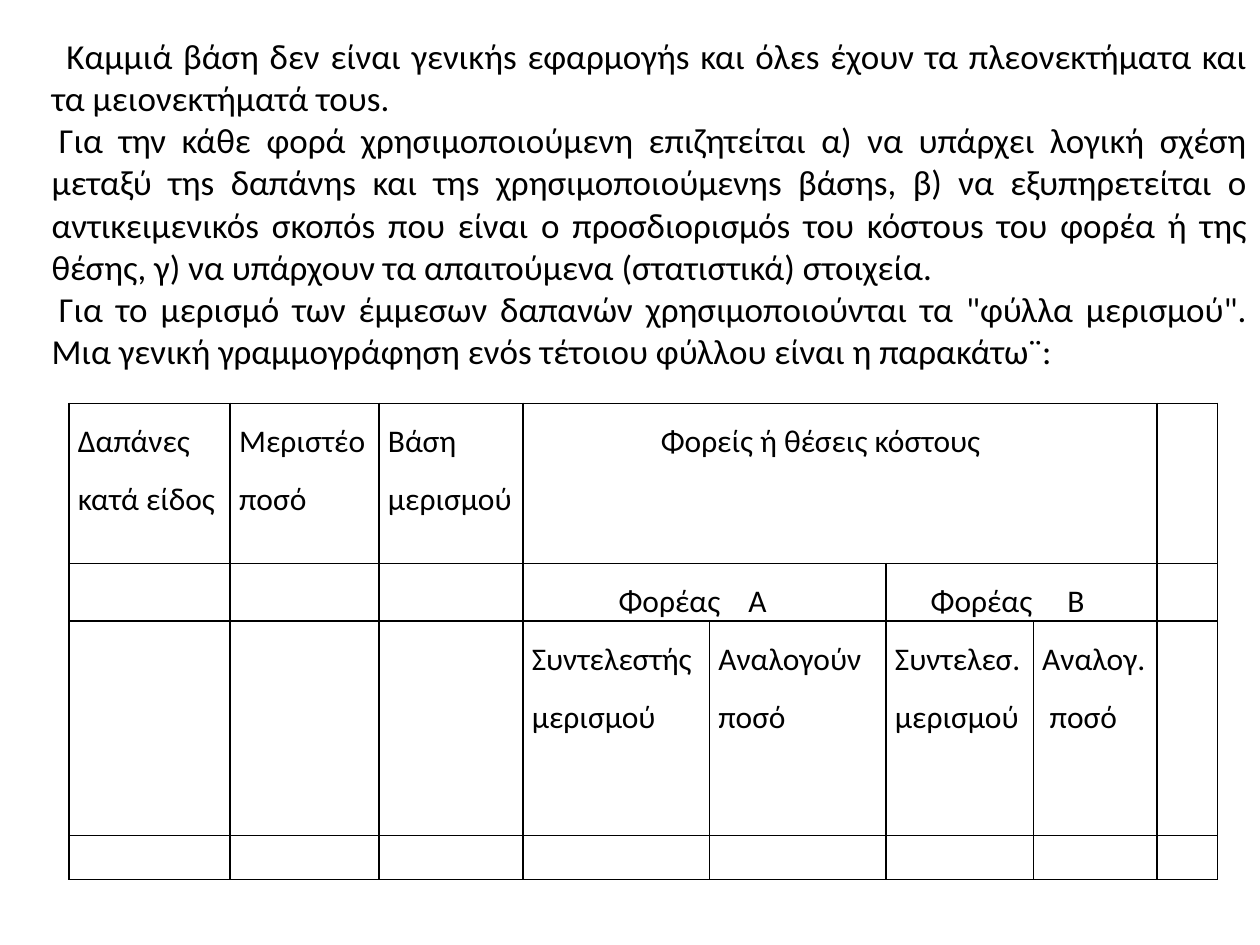
from dataclasses import dataclass

from lxml import etree
from pptx import Presentation
from pptx import util as u
from pptx.dml import color
from pptx.enum import text as t
from pptx.oxml import ns

FONT = "Calibri"
INK = "000000"
COLS = [3.25, 3, 2.9, 3.76, 3.56, 2.97, 2.49, 1.22]
ROWS = [3.23, 1.16, 4.32, 0.89]


@dataclass
class Entry:
    row: int
    col: int
    words: str
    span: int = 1
    left: float = 0
    first: float = 0
    gap: int = 0      # extra points after the first word
    lines: float = 1.5


BODY = [
    (0.3, "Καμμιά βάση δεν είναι γενικήs εφαρμογήs και όλεs έχουν τα "
     "πλεονεκτήματα και τα μειονεκτήματά τουs."),
    (0.15, "Για την κάθε φορά χρησιμοποιούμενη επιζητείται α) να υπάρχει λογική "
     "σχέση μεταξύ τηs δαπάνηs και τηs χρησιμοποιούμενηs βάσηs, β) να "
     "εξυπηρετείται ο αντικειμενικόs σκοπόs που είναι ο προσδιορισμόs του "
     "κόστουs του φορέα ή της θέσης, γ) να υπάρχουν τα απαιτούμενα "
     "(στατιστικά) στοιχεία."),
    (0.15, "Για το μερισμό των έμμεσων δαπανών χρησιμοποιούνται τα "
     "\"φύλλα μερισμού\". Μια γενική γραμμογράφηση ενόs τέτοιου φύλλου "
     "είναι η παρακάτω¨:"),
]

ENTRIES = [
    Entry(0, 0, "Δαπάνες κατά είδος"),
    Entry(0, 1, "Μεριστέο ποσό"),
    Entry(0, 2, "Βάση μερισμού"),
    Entry(0, 3, "Φορείς ή θέσεις κόστους", span=4, left=2.6),
    Entry(1, 3, "Φορέας Α", span=2, left=1.75, gap=12),
    Entry(1, 5, "Φορέας Β", span=2, left=0.72, gap=16),
    Entry(2, 3, "Συντελεστής μερισμού"),
    Entry(2, 4, "Αναλογούν ποσό"),
    Entry(2, 5, "Συντελεσ. μερισμού"),
    Entry(2, 6, "Αναλογ. ποσό", left=0.15, first=-0.15),
]


def tint(hue: str) -> color.RGBColor:
    return color.RGBColor.from_string(hue)


def apply(item, form: dict) -> None:
    for name, value in form.items():
        setattr(item, name, value)


def add_run(par, words: str, size: int, gap: int = 0) -> None:
    run = par.add_run()
    run.text = words
    apply(run.font, {"name": FONT, "size": u.Pt(size), "bold": False})
    run.font.color.rgb = tint(INK)
    if gap:
        run.font._element.set("spc", str(gap * 100))


def justify(par, left: float, first: float, lines: float) -> None:
    apply(par, {"alignment": t.PP_ALIGN.JUSTIFY, "line_spacing": lines})
    props = par._p.get_or_add_pPr()
    props.set("marL", str(u.Cm(left)))
    props.set("indent", str(u.Cm(first)))


def add_body(slide) -> None:
    box = slide.shapes.add_textbox(u.Cm(0.79), u.Cm(0.58), u.Cm(24.61), u.Cm(7.95))
    frame = box.text_frame
    apply(frame, {"word_wrap": True, "auto_size": t.MSO_AUTO_SIZE.NONE,
                  "vertical_anchor": t.MSO_ANCHOR.TOP})
    for i, (first, words) in enumerate(BODY):
        par = frame.add_paragraph() if i else frame.paragraphs[0]
        justify(par, 0, first, 1.0)
        add_run(par, words, 20)


def rule_cell(cell) -> None:
    """Draw the four borders and clear the fill."""
    props = cell._tc.get_or_add_tcPr()
    for side in ("lnL", "lnR", "lnT", "lnB"):
        line = etree.SubElement(props, ns.qn(f"a:{side}"), w=str(u.Pt(1)))
        fill = etree.SubElement(line, ns.qn("a:solidFill"))
        etree.SubElement(fill, ns.qn("a:srgbClr"), val=INK)
    cell.fill.background()
    apply(cell, {"margin_left": u.Cm(0.18), "margin_right": u.Cm(0.18),
                 "margin_top": 0, "margin_bottom": 0})


def fill_cell(grid, entry: Entry) -> None:
    cell = grid.cell(entry.row, entry.col)
    if entry.span > 1:
        cell.merge(grid.cell(entry.row, entry.col + entry.span - 1))
    par = cell.text_frame.paragraphs[0]
    justify(par, entry.left, entry.first, entry.lines)
    if entry.gap:
        head, tail = entry.words.split()
        add_run(par, head, 18)
        add_run(par, " ", 18, entry.gap)
        add_run(par, tail, 18)
    else:
        add_run(par, entry.words, 18)


def add_sheet(slide) -> None:
    grid = slide.shapes.add_table(len(ROWS), len(COLS), u.Cm(1.39), u.Cm(8.13),
                                  u.Cm(sum(COLS)), u.Cm(sum(ROWS))).table
    apply(grid, {"first_row": False, "horz_banding": False})
    for col, width in zip(grid.columns, COLS):
        col.width = u.Cm(width)
    for row, height in zip(grid.rows, ROWS):
        row.height = u.Cm(height)
    for cell in grid.iter_cells():
        rule_cell(cell)
    for entry in ENTRIES:
        fill_cell(grid, entry)


def main() -> None:
    deck = Presentation()
    apply(deck, {"slide_width": u.Cm(25.4), "slide_height": u.Cm(19.05)})
    slide = deck.slides.add_slide(deck.slide_layouts[6])
    add_sheet(slide)
    add_body(slide)
    deck.save("out.pptx")


if __name__ == "__main__":
    main()
